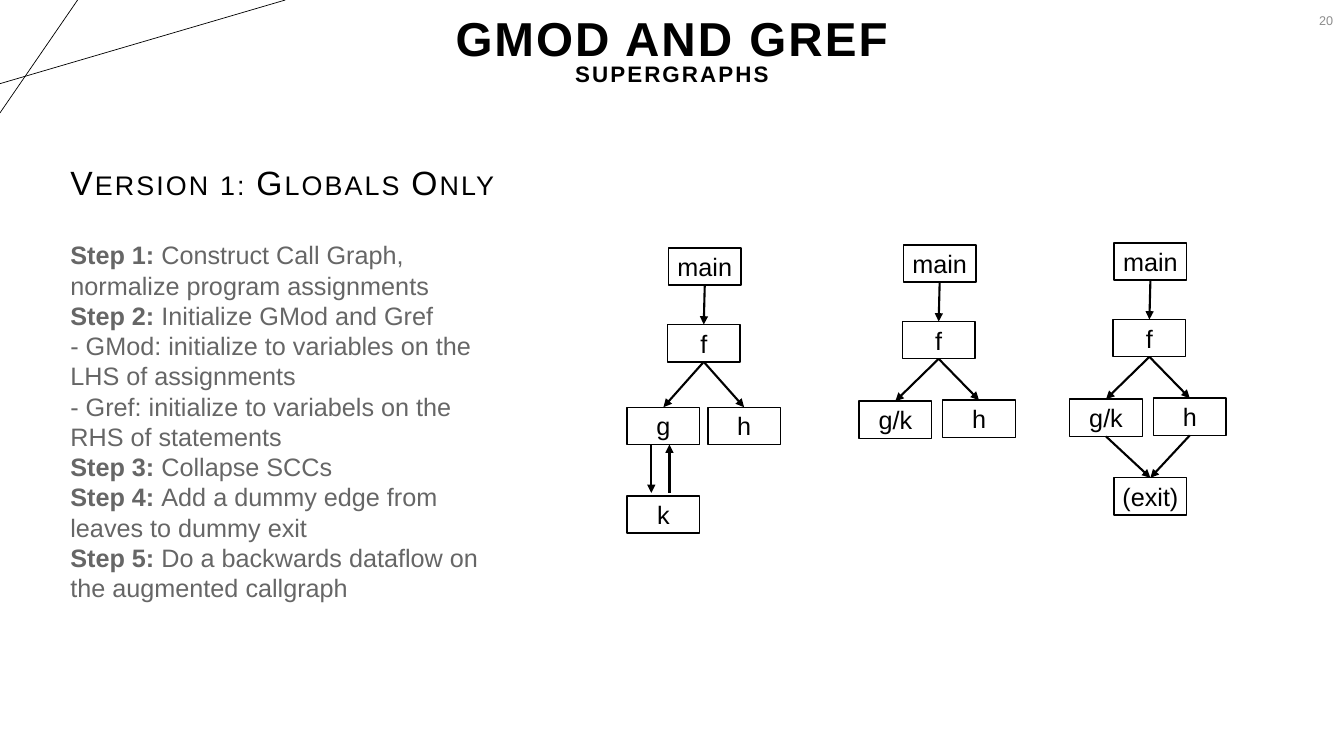
from pptx import Presentation, util as u
from pptx.dml.color import RGBColor
from pptx.enum import shapes, text
from pptx.oxml.ns import qn
from lxml import etree

COLORS = {"ink": "000000", "body": "666666", "number": "8C8C8C", "paper": "FFFFFF"}
NODE_WIDTH, NODE_HEIGHT = 0.72, 0.37
TOP, BOTTOM = 0, 2
ALIGN = text.PP_ALIGN
MIDDLE = text.MSO_ANCHOR.MIDDLE

STEPS = [
    ("Step 1: ", "Construct Call Graph, normalize program assignments"),
    ("Step 2: ", "Initialize GMod and Gref"),
    ("", "- GMod: initialize to variables on the LHS of assignments"),
    ("", "- Gref: initialize to variabels on the RHS of statements"),
    ("Step 3: ", "Collapse SCCs"),
    ("Step 4: ", "Add a dummy edge from leaves to dummy exit"),
    ("Step 5:", " Do a backwards dataflow on the augmented callgraph"),
]


def color(name):
    return RGBColor.from_string(COLORS[name])


def style(span, size, ink="ink", bold=False, spacing=0, small_caps=False):
    span.font.name = "Arial"
    span.font.size = u.Pt(size)
    span.font.bold = bold
    span.font.color.rgb = color(ink)
    properties = span.font._element
    if spacing:
        properties.set("spc", str(int(spacing * 100)))
    if small_caps:
        properties.set("cap", "small")


def add_text_box(page, box, anchor=text.MSO_ANCHOR.TOP):
    frame = page.shapes.add_textbox(*map(u.Inches, box)).text_frame
    frame.word_wrap = True
    frame.vertical_anchor = anchor
    return frame


def add_line(page, start, end, width, arrow=False):
    line = page.shapes.add_connector(
        shapes.MSO_CONNECTOR.STRAIGHT, *map(u.Inches, (*start, *end)))
    line.line.color.rgb = color("ink")
    line.line.width = u.Pt(width)
    if arrow:
        etree.SubElement(line.line._get_or_add_ln(), qn("a:tailEnd"), type="triangle")
    etree.SubElement(line._element.spPr, qn("a:effectLst"))
    return line


def add_label(page, box, wording, size, align=ALIGN.LEFT, anchor=MIDDLE,
              line_spacing=0.9, space_before=0, **look):
    para = add_text_box(page, box, anchor).paragraphs[0]
    para.text = wording
    para.alignment = align
    para.line_spacing = line_spacing
    para.space_before = u.Pt(space_before)
    style(para.runs[0], size, **look)


def add_header(page, box):
    left, top, width, height = box
    # Corner lines
    add_line(page, (0, 0.83), (2.83, 0), 0.5)
    add_line(page, (0.77, 0), (0, 1.12), 0.5)
    # Page number, title and subtitle
    add_label(page, (left + width - 3, 0, 3, 0.4), "20", 9, ALIGN.RIGHT,
              line_spacing=1, ink="number")
    for wording, size, offset in (("GMOD AND GREF", 34, 0), ("SUPERGRAPHS", 16, 0.34)):
        add_label(page, (left, top + offset, width, height), wording, size,
                  ALIGN.CENTER, bold=True, spacing=1.5)


def add_steps(page, box):
    left, top, width, height = box
    add_label(page, (left, top, 5.31, 0.83), "Version 1: Globals Only", 24,
              anchor=text.MSO_ANCHOR.TOP, space_before=10, spacing=1.5, small_caps=True)
    frame = add_text_box(page, (left, top + 0.73, width, height - 0.73))
    for index, parts in enumerate(STEPS):
        para = frame.add_paragraph() if index else frame.paragraphs[0]
        for wording, bold in zip(parts, (True, False)):
            if wording:
                span = para.add_run()
                span.text = wording
                style(span, 18, "body", bold)


def add_node(page, left, top, name):
    node = page.shapes.add_shape(
        shapes.MSO_SHAPE.RECTANGLE,
        *map(u.Inches, (left, top, NODE_WIDTH, NODE_HEIGHT)))
    node.shadow.inherit = False
    node.fill.solid()
    node.fill.fore_color.rgb = color("paper")
    node.line.color.rgb = color("ink")
    node.line.width = u.Pt(1)
    frame = node.text_frame
    frame.margin_left = frame.margin_right = frame.margin_top = frame.margin_bottom = 0
    frame.word_wrap = False
    frame.vertical_anchor = MIDDLE
    para = frame.paragraphs[0]
    para.text = name
    para.alignment = ALIGN.CENTER
    style(para.runs[0], 18)
    return node


def add_edge(page, caller, callee):
    edge = add_line(page, (0, 0), (1, 1), 1.5, arrow=True)
    edge.begin_connect(caller, BOTTOM)
    edge.end_connect(callee, TOP)


def add_call_graph(page, box, branch, inset, row, gap, drop=0):
    """Draw main > f > (branch, h); drop lowers the branch node below h."""
    left, top = box
    main = add_node(page, left + inset, top, "main")
    function = add_node(page, left + inset - 0.01, top + 0.76, "f")
    first = add_node(page, left, top + row + drop, branch)
    second = add_node(page, left + NODE_WIDTH + gap, top + row, "h")
    for caller, callee in ((main, function), (function, first), (function, second)):
        add_edge(page, caller, callee)
    return first, second


def add_cyclic_graph(page, box):
    left, top = box
    add_call_graph(page, box, "g", 0.41, 1.58, 0.08)
    add_node(page, left, top + 2.46, "k")
    # Calls between g and k in both directions
    upper, lower = top + 1.95, top + 2.43
    add_line(page, (left + 0.24, upper), (left + 0.24, lower), 1.5, arrow=True)
    add_line(page, (left + 0.42, lower), (left + 0.42, upper), 1.5, arrow=True)


def add_collapsed_graph(page, box):
    return add_call_graph(page, box, "g/k", 0.44, 1.54, 0.11, drop=0.01)


def add_exit_graph(page, box):
    left, top = box
    leaves = add_collapsed_graph(page, box)
    dummy_exit = add_node(page, left + 0.44, top + 2.33, "(exit)")
    for leaf in leaves:
        add_edge(page, leaf, dummy_exit)


def main():
    deck = Presentation()
    deck.slide_width, deck.slide_height = u.Inches(13.33), u.Inches(7.5)
    page = deck.slides.add_slide(deck.slide_layouts[6])
    add_header(page, (0.01, -0.32, 13.31, 1.45))
    add_steps(page, (0.6, 1.6, 4.43, 4.47))
    add_cyclic_graph(page, (6.22, 2.46))
    add_collapsed_graph(page, (8.52, 2.43))
    add_exit_graph(page, (10.61, 2.41))
    deck.save("out.pptx")


if __name__ == "__main__":
    main()
